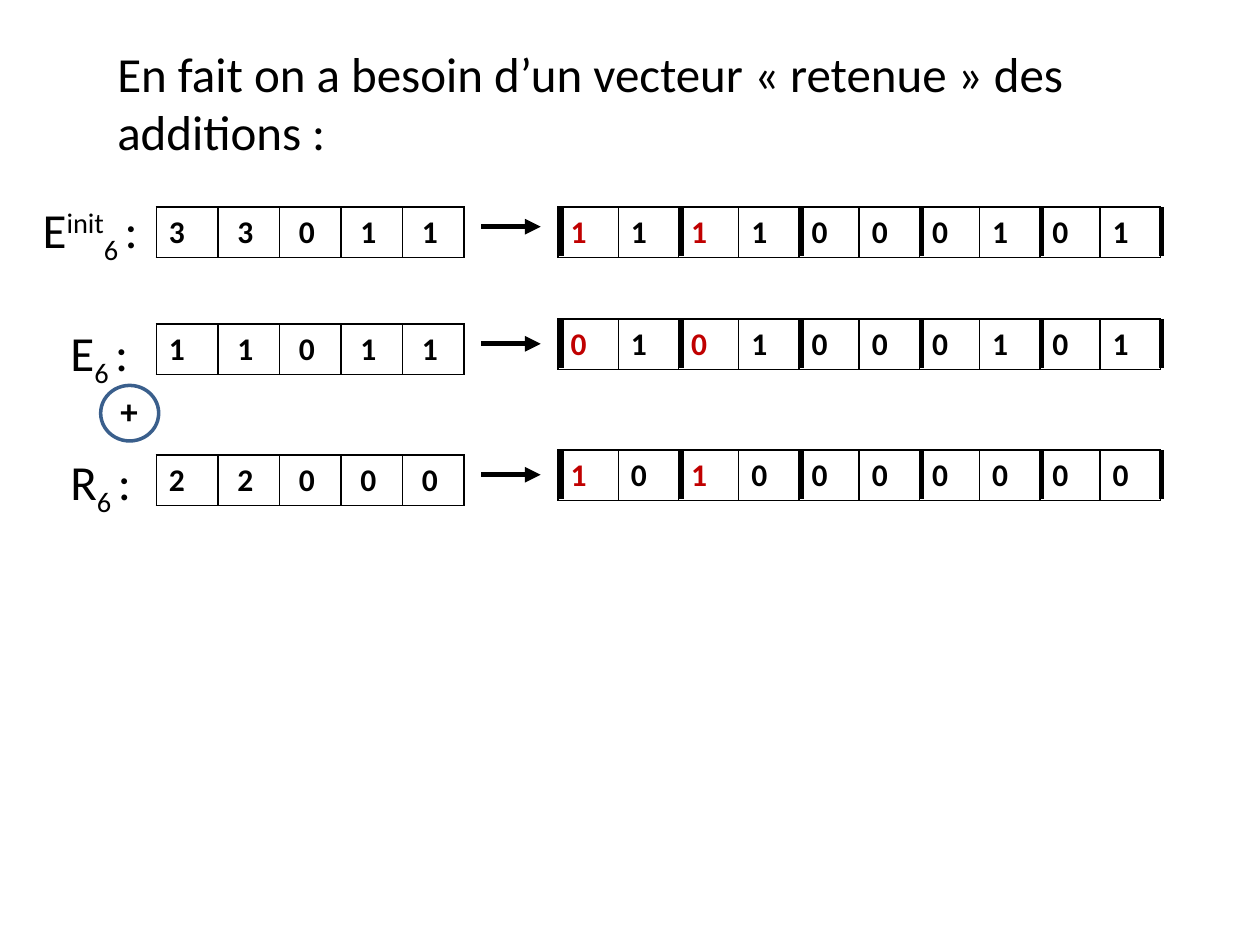
import pptx
import pptx.dml.color
import pptx.enum.dml
import pptx.enum.shapes
import pptx.enum.text
import pptx.oxml
import pptx.oxml.ns
import pptx.util

Cm = pptx.util.Cm
Pt = pptx.util.Pt
BLACK = pptx.dml.color.RGBColor(0, 0, 0)
WHITE = pptx.dml.color.RGBColor(255, 255, 255)
RED = pptx.dml.color.RGBColor(0xC0, 0, 0)
BLUE = pptx.dml.color.RGBColor(0x3A, 0x5F, 0x8C)

ROW_HEIGHT = 1.02
DIGITS_LEFT, DIGIT_WIDTH = 3.15, 1.24
BITS_LEFT, BIT_WIDTH = 11.25, 1.214
BAR_LEFT, BAR_STEP, BAR_HEIGHT = 11.32, 2.42, 0.99
ARROW_START, ARROW_END, ARROW_DROP = 9.7, 10.9, 0.4

SUBSCRIPT, SUPERSCRIPT = -25000, 30000
INDEX = [("6 ", SUBSCRIPT), (":", 0)]
VECTORS = [
    {"label": [("E", 0), ("init", SUPERSCRIPT)] + INDEX, "label_at": (0.61, 3.89, 2.77),
     "digits": "33011", "digits_top": 4.17, "bits": "1111000101", "bits_top": 4.17},
    {"label": [("E", 0)] + INDEX, "label_at": (1.17, 6.38, 1.9),
     "digits": "11011", "digits_top": 6.53, "bits": "0101000101", "bits_top": 6.43},
    {"label": [("R", 0)] + INDEX, "label_at": (1.17, 8.97, 1.95),
     "digits": "22000", "digits_top": 9.17, "bits": "1010000000", "bits_top": 9.07},
]
CARRY_COLUMNS = (0, 2)


def add_span(para, text, size=28, bold=False, color=BLACK, baseline=0):
    span = para.add_run()
    span.text = text
    span.font.name = "Calibri"
    span.font.size = Pt(size)
    span.font.bold = bold
    span.font.color.rgb = color
    if baseline:
        span._r.get_or_add_rPr().set("baseline", str(baseline))


def add_title(page, text):
    title = page.shapes.title
    title.left, title.top, title.width, title.height = Cm(2.11), Cm(0.74), Cm(19.61), Cm(2.64)
    frame = title.text_frame
    frame.word_wrap = True
    frame.auto_size = pptx.enum.text.MSO_AUTO_SIZE.SHAPE_TO_FIT_TEXT
    frame.vertical_anchor = pptx.enum.text.MSO_ANCHOR.TOP
    para = frame.paragraphs[0]
    para.alignment = pptx.enum.text.PP_ALIGN.LEFT
    add_span(para, text)


def add_label(page, left, top, width, height, parts, **style):
    box = page.shapes.add_textbox(Cm(left), Cm(top), Cm(width), Cm(height))
    box.text_frame.word_wrap = False
    box.text_frame.auto_size = pptx.enum.text.MSO_AUTO_SIZE.SHAPE_TO_FIT_TEXT
    for text, baseline in parts:
        add_span(box.text_frame.paragraphs[0], text, baseline=baseline, **style)


def add_borders(cell):
    properties = cell._tc.get_or_add_tcPr()
    for position, side in enumerate(("lnL", "lnR", "lnT", "lnB")):
        properties.insert(position, pptx.oxml.parse_xml(
            f'<a:{side} {pptx.oxml.ns.nsdecls("a")} w="{Pt(1)}">'
            f'<a:solidFill><a:srgbClr val="{BLACK}"/></a:solidFill></a:{side}>'))


def add_vector(page, left, top, column_width, texts, red_columns=(), fill=None):
    count = len(texts)
    table = page.shapes.add_table(
        1, count, Cm(left), Cm(top), Cm(count * column_width), Cm(ROW_HEIGHT)).table
    table.first_row = False
    table.horz_banding = False
    for index, text in enumerate(texts):
        table.columns[index].width = Cm(column_width)
        cell = table.cell(0, index)
        if fill is None:
            cell.fill.background()
        else:
            cell.fill.solid()
            cell.fill.fore_color.rgb = fill
        add_borders(cell)
        color = RED if index in red_columns else BLACK
        add_span(cell.text_frame.paragraphs[0], text, size=18, bold=True, color=color)


def add_line(page, start, end, arrow=False):
    line = page.shapes.add_connector(
        pptx.enum.shapes.MSO_CONNECTOR.STRAIGHT, *map(Cm, start + end))
    line.line.color.rgb = BLACK
    line.line.width = Pt(3)
    if arrow:
        tail = pptx.oxml.parse_xml(
            f'<a:tailEnd {pptx.oxml.ns.nsdecls("a")} type="triangle"/>')
        line.line._get_or_add_ln().append(tail)
    line._element.spPr.append(
        pptx.oxml.parse_xml(f'<a:effectLst {pptx.oxml.ns.nsdecls("a")}/>'))


def add_circle(page, left, top, width, height):
    circle = page.shapes.add_shape(
        pptx.enum.shapes.MSO_SHAPE.OVAL, Cm(left), Cm(top), Cm(width), Cm(height))
    circle.shadow.inherit = False
    circle.fill.background()
    circle.line.color.rgb = BLUE
    circle.line.width = Pt(2)


def add_row(page, vector):
    left, top, width = vector["label_at"]
    add_label(page, left, top, width, 1.45, vector["label"])
    first, *others = vector["digits"]
    digits = [first] + [f" {digit}" for digit in others]
    add_vector(page, DIGITS_LEFT, vector["digits_top"], DIGIT_WIDTH, digits)
    arrow_top = vector["digits_top"] + ARROW_DROP
    add_line(page, (ARROW_START, arrow_top), (ARROW_END, arrow_top), arrow=True)
    bits_top = vector["bits_top"]
    add_vector(page, BITS_LEFT, bits_top, BIT_WIDTH, vector["bits"], CARRY_COLUMNS, WHITE)
    for index in range(len(vector["bits"]) // 2 + 1):
        bar_left = BAR_LEFT + index * BAR_STEP
        add_line(page, (bar_left, bits_top), (bar_left, bits_top + BAR_HEIGHT))


def main():
    deck = pptx.Presentation()
    deck.slide_width, deck.slide_height = Cm(25.4), Cm(19.05)
    page = deck.slides.add_slide(deck.slide_layouts.get_by_name("Title Only"))
    add_title(page, "En fait on a besoin d’un vecteur « retenue » des additions :")
    for vector in VECTORS:
        add_row(page, vector)
    add_label(page, 2.18, 7.72, 0.87, 1.11, [("+", 0)], size=20, bold=True)
    add_circle(page, 2.03, 7.77, 1.17, 1.12)
    deck.save("out.pptx")


if __name__ == "__main__":
    main()
